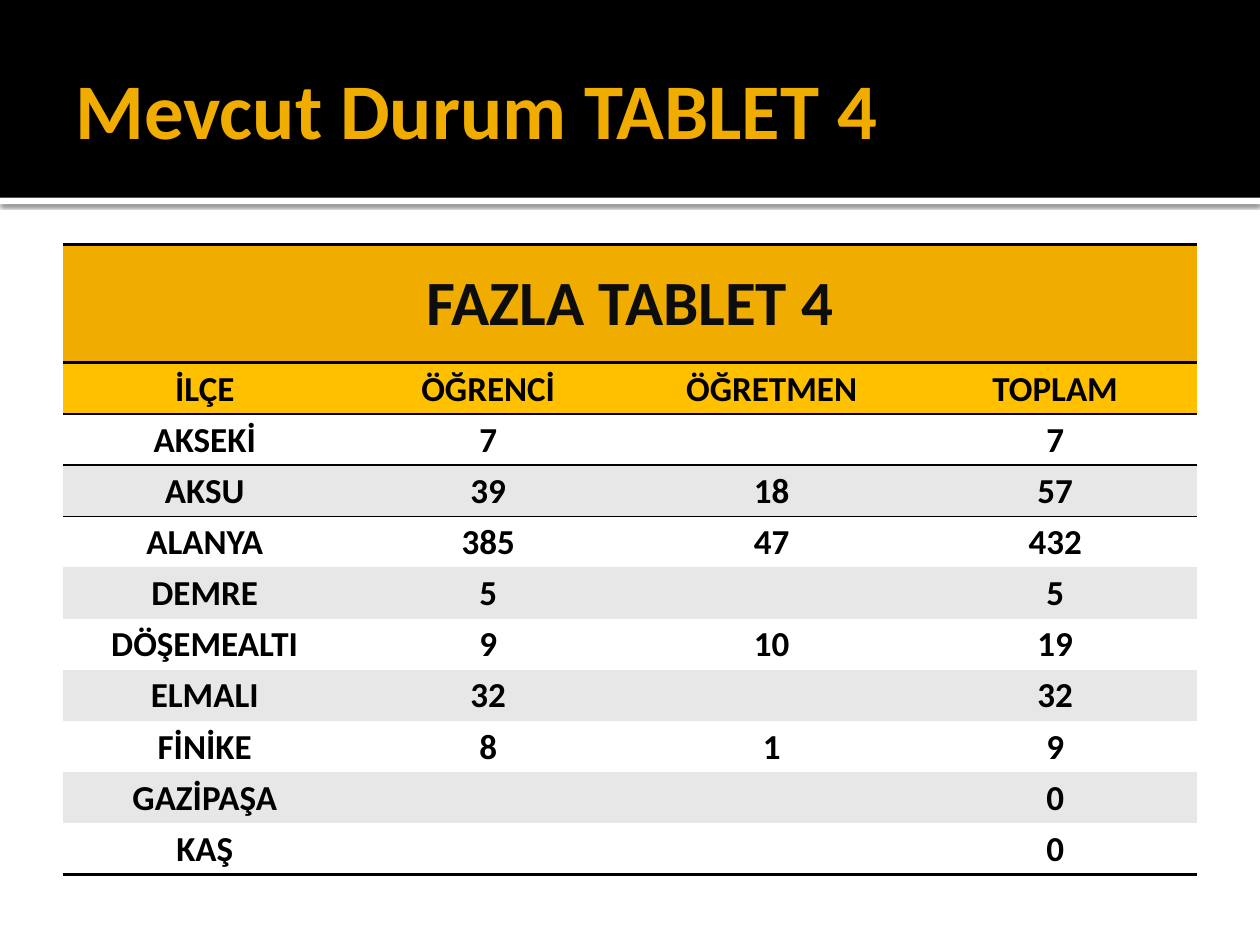
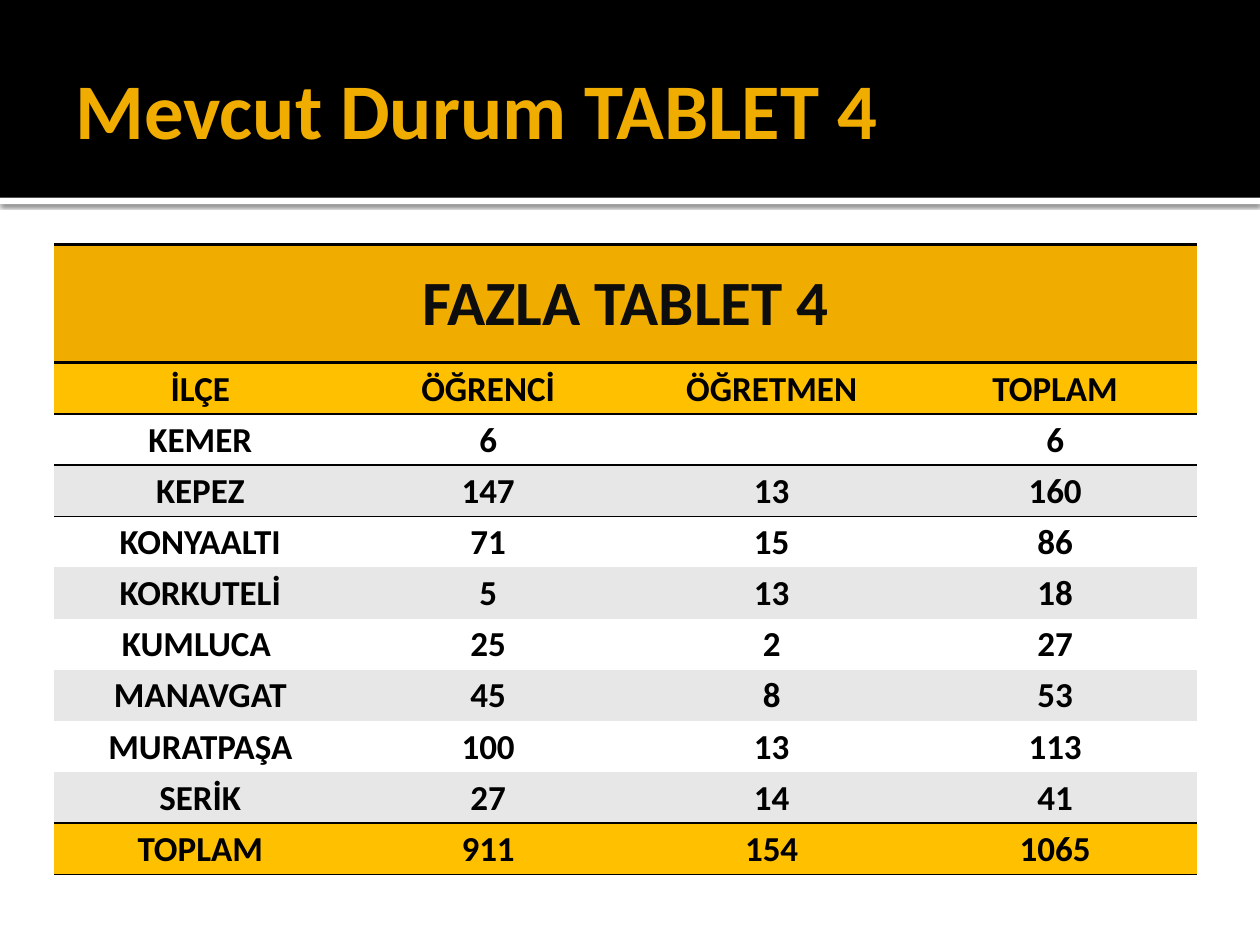
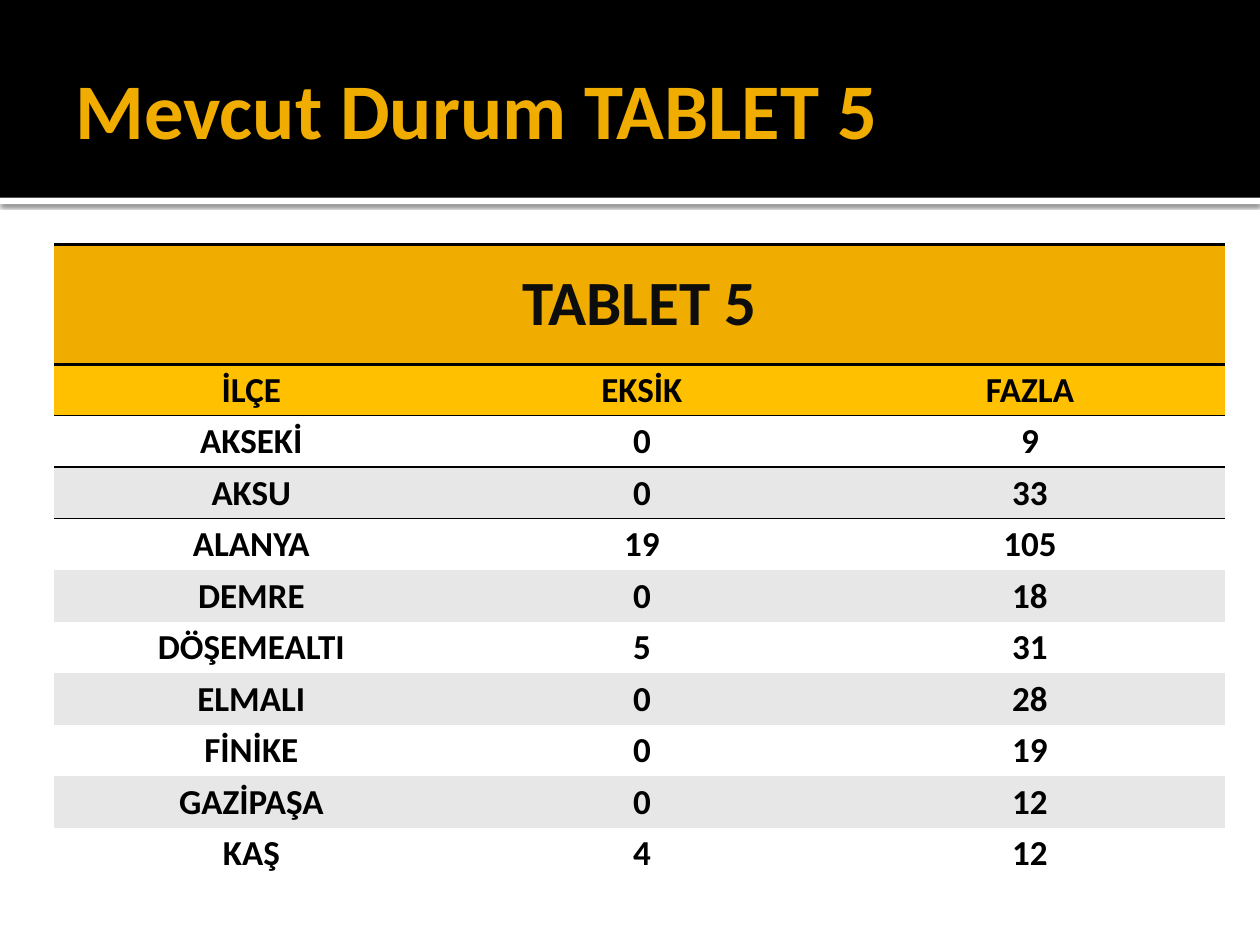
from dataclasses import dataclass

from lxml.etree import SubElement
from pptx import Presentation
from pptx.dml.color import RGBColor
from pptx.enum.shapes import MSO_SHAPE
from pptx.enum.text import MSO_ANCHOR, MSO_AUTO_SIZE, PP_ALIGN
from pptx.oxml.ns import qn
from pptx.util import Inches, Pt

NO_GRID_STYLE = "{2D5ABB26-0587-4C30-8999-92F81FD0307C}"


@dataclass(frozen=True)
class Theme:
    font: str = "Calibri"
    black: str = "000000"
    white: str = "FFFFFF"
    gold: str = "F0AD00"
    amber: str = "FFC000"
    stripe: str = "E7E7E7"
    heading_ink: str = "0D0D0D"
    title_size: int = 45
    heading_size: int = 36
    body_size: int = 20
    thick: int = 2
    thin: int = 1


THEME = Theme()


@dataclass(frozen=True)
class Band:
    top: float
    height: float
    color: str
    shadow: bool = False


BANDS = (
    Band(1.57, 0.05, THEME.white, shadow=True),
    Band(0, 1.57, THEME.black),
)


@dataclass(frozen=True)
class DistrictTable:
    title: str
    heading: str
    columns: tuple[str, ...]
    rows: tuple[tuple[str | int | None, ...], ...]
    left: float
    widths: tuple[float, ...]
    height: float
    heading_height: float
    closing_rule: int = 0
    has_total: bool = False


TABLES = (
    DistrictTable(
        "Mevcut Durum TABLET 4", "FAZLA TABLET 4",
        ("İLÇE", "ÖĞRENCİ", "ÖĞRETMEN", "TOPLAM"),
        (
            ("AKSEKİ", 7, None, 7),
            ("AKSU", 39, 18, 57),
            ("ALANYA", 385, 47, 432),
            ("DEMRE", 5, None, 5),
            ("DÖŞEMEALTI", 9, 10, 19),
            ("ELMALI", 32, None, 32),
            ("FİNİKE", 8, 1, 9),
            ("GAZİPAŞA", None, None, 0),
            ("KAŞ", None, None, 0),
        ),
        left=0.5, widths=(2.25,) * 4, height=5, heading_height=0.94,
        closing_rule=THEME.thick,
    ),
    DistrictTable(
        "Mevcut Durum TABLET 4", "FAZLA TABLET 4",
        ("İLÇE", "ÖĞRENCİ", "ÖĞRETMEN", "TOPLAM"),
        (
            ("KEMER", 6, None, 6),
            ("KEPEZ", 147, 13, 160),
            ("KONYAALTI", 71, 15, 86),
            ("KORKUTELİ", 5, 13, 18),
            ("KUMLUCA ", 25, 2, 27),
            ("MANAVGAT", 45, 8, 53),
            ("MURATPAŞA", 100, 13, 113),
            ("SERİK", 27, 14, 41),
            ("TOPLAM", 911, 154, 1065),
        ),
        left=0.43, widths=(2.32,) + (2.25,) * 3, height=5, heading_height=0.94,
        closing_rule=THEME.thin, has_total=True,
    ),
    DistrictTable(
        "Mevcut Durum TABLET 5", "TABLET 5",
        ("İLÇE", "EKSİK", "FAZLA"),
        (
            ("AKSEKİ", 0, 9),
            ("AKSU", 0, 33),
            ("ALANYA", 19, 105),
            ("DEMRE", 0, 18),
            ("DÖŞEMEALTI", 5, 31),
            ("ELMALI", 0, 28),
            ("FİNİKE", 0, 19),
            ("GAZİPAŞA", 0, 12),
            ("KAŞ", 4, 12),
        ),
        left=0.43, widths=(3.13, 3.07, 3.09), height=5.04, heading_height=0.95,
    ),
)


def set_font(paragraph, size: int, color: str) -> None:
    font = paragraph.font
    font.name = THEME.font
    font.size = Pt(size)
    font.bold = True
    font.color.rgb = RGBColor.from_string(color)


def add_color(parent, color: str):
    fill = SubElement(parent, qn("a:solidFill"))
    return SubElement(fill, qn("a:srgbClr"), val=color)


def add_bands(slide, layout) -> None:
    """Draw the bands and move them to the back of the layout, for every slide."""
    for depth, band in enumerate(BANDS, start=2):
        strip = slide.shapes.add_shape(
            MSO_SHAPE.RECTANGLE, 0, Inches(band.top), Inches(10), Inches(band.height))
        strip.shadow.inherit = False
        strip.fill.solid()
        strip.fill.fore_color.rgb = RGBColor.from_string(band.color)
        strip.line.fill.background()
        if band.shadow:
            effects = strip._element.spPr.find(qn("a:effectLst"))
            shadow = SubElement(
                effects, qn("a:outerShdw"), blurRad=str(Pt(2.5)), dist=str(Pt(0.8)),
                dir="5400000", algn="tl", rotWithShape="0")
            tint = SubElement(shadow, qn("a:srgbClr"), val=THEME.black)
            SubElement(tint, qn("a:alpha"), val="60000")
        layout.shapes._spTree.insert(depth, strip._element)


def write_title(slide, text: str) -> None:
    title = slide.shapes.title
    title.left, title.top = Inches(0.5), Inches(0.17)
    title.width, title.height = Inches(9), Inches(1.37)
    frame = title.text_frame
    frame.text = text
    frame.auto_size = MSO_AUTO_SIZE.NONE
    frame.vertical_anchor = MSO_ANCHOR.MIDDLE
    frame.margin_left = Inches(0.1)
    frame.margin_top = frame.margin_right = frame.margin_bottom = Inches(0.05)
    frame.paragraphs[0].alignment = PP_ALIGN.LEFT
    set_font(frame.paragraphs[0], THEME.title_size, THEME.gold)


def add_rule(cell, side: str, weight: int) -> None:
    if weight:
        rule = SubElement(cell._tc.get_or_add_tcPr(), qn(f"a:{side}"), w=str(Pt(weight)))
        add_color(rule, THEME.black)


def row_fill(content: DistrictTable, index: int) -> str:
    if index == 0:
        return THEME.gold
    if index == 1 or (content.has_total and index == len(content.rows) + 1):
        return THEME.amber
    return THEME.stripe if index % 2 else THEME.white


def rule_weights(content: DistrictTable) -> list[int]:
    """Weight of each horizontal rule, from the top edge to the bottom edge."""
    weights = [THEME.thick] * 2 + [THEME.thin] * 2
    weights += [0] * (len(content.rows) - 2)
    weights.append(content.closing_rule)
    if content.has_total:
        weights[-2] = THEME.thin
    return weights


def format_cell(cell, is_heading: bool, fill: str) -> None:
    cell.fill.solid()
    cell.fill.fore_color.rgb = RGBColor.from_string(fill)
    cell.vertical_anchor = MSO_ANCHOR.MIDDLE
    paragraph = cell.text_frame.paragraphs[0]
    paragraph.alignment = PP_ALIGN.CENTER
    if is_heading:
        set_font(paragraph, THEME.heading_size, THEME.heading_ink)
    else:
        cell.margin_left = cell.margin_right = cell.margin_top = Inches(0.01)
        cell.margin_bottom = 0
        set_font(paragraph, THEME.body_size, THEME.black)


def add_district_table(slide, content: DistrictTable) -> None:
    lines = ((content.heading,), content.columns, *content.rows)
    table = slide.shapes.add_table(
        len(lines), len(content.columns), Inches(content.left), Inches(1.94),
        Inches(sum(content.widths)), Inches(content.height)).table
    table.first_row = table.horz_banding = False
    table._tbl.tblPr.find(qn("a:tableStyleId")).text = NO_GRID_STYLE
    for column, width in zip(table.columns, content.widths):
        column.width = Inches(width)

    body_height = (content.height - content.heading_height) / (len(lines) - 1)
    weights = rule_weights(content)
    for index, (row, line) in enumerate(zip(table.rows, lines)):
        row.height = Inches(body_height if index else content.heading_height)
        for cell, value in zip(row.cells, line):
            if value is not None:
                cell.text = str(value)
        for cell in row.cells:
            add_rule(cell, "lnT", weights[index])
            add_rule(cell, "lnB", weights[index + 1])
            format_cell(cell, index == 0, row_fill(content, index))
    table.cell(0, 0).merge(table.cell(0, len(content.columns) - 1))


def main() -> None:
    deck = Presentation()
    deck.slide_width, deck.slide_height = Inches(10), Inches(7.5)
    title_only = deck.slide_layouts[5]
    for content in TABLES:
        slide = deck.slides.add_slide(title_only)
        write_title(slide, content.title)
        add_district_table(slide, content)
    add_bands(deck.slides[0], title_only)
    deck.save("out.pptx")


if __name__ == "__main__":
    main()
